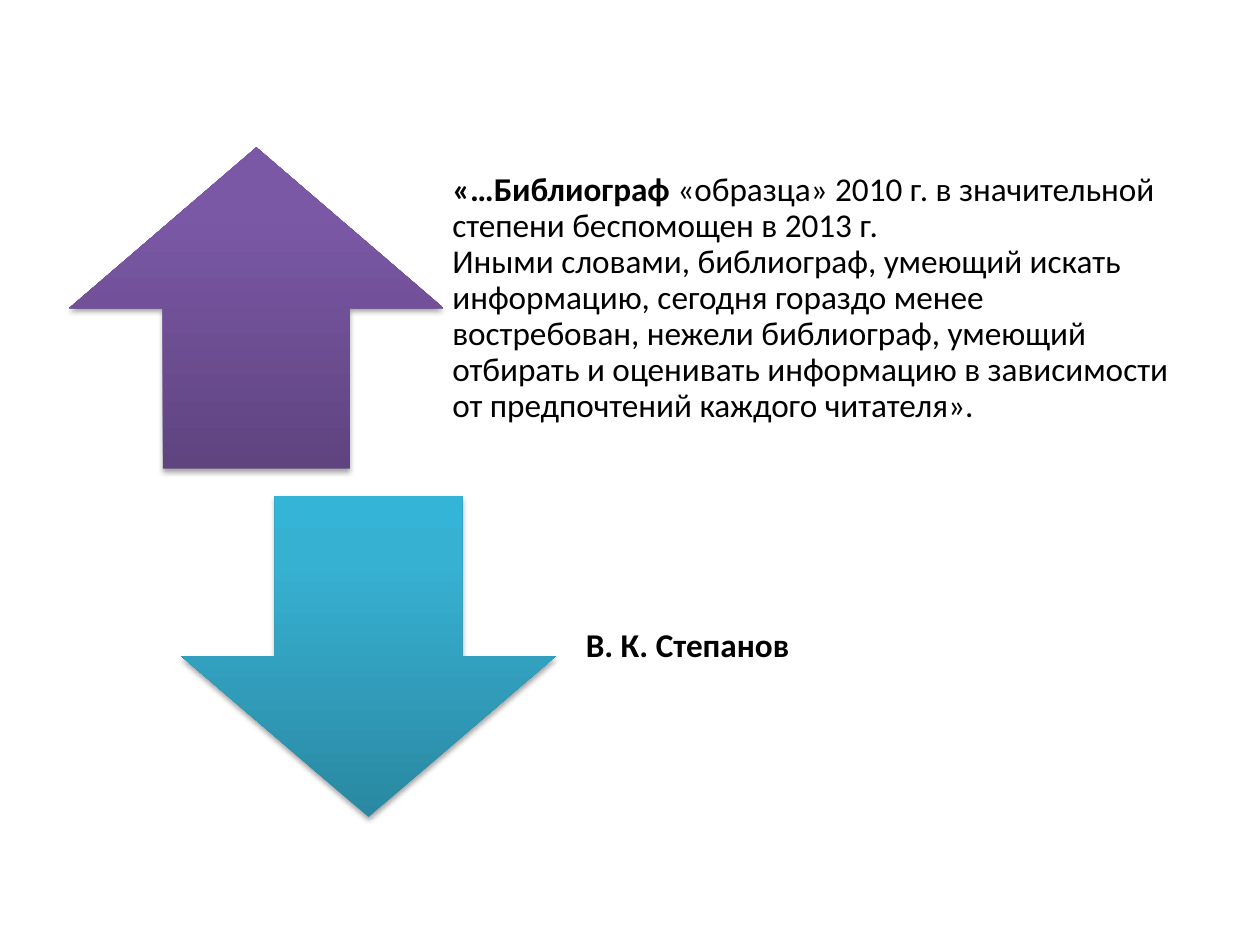
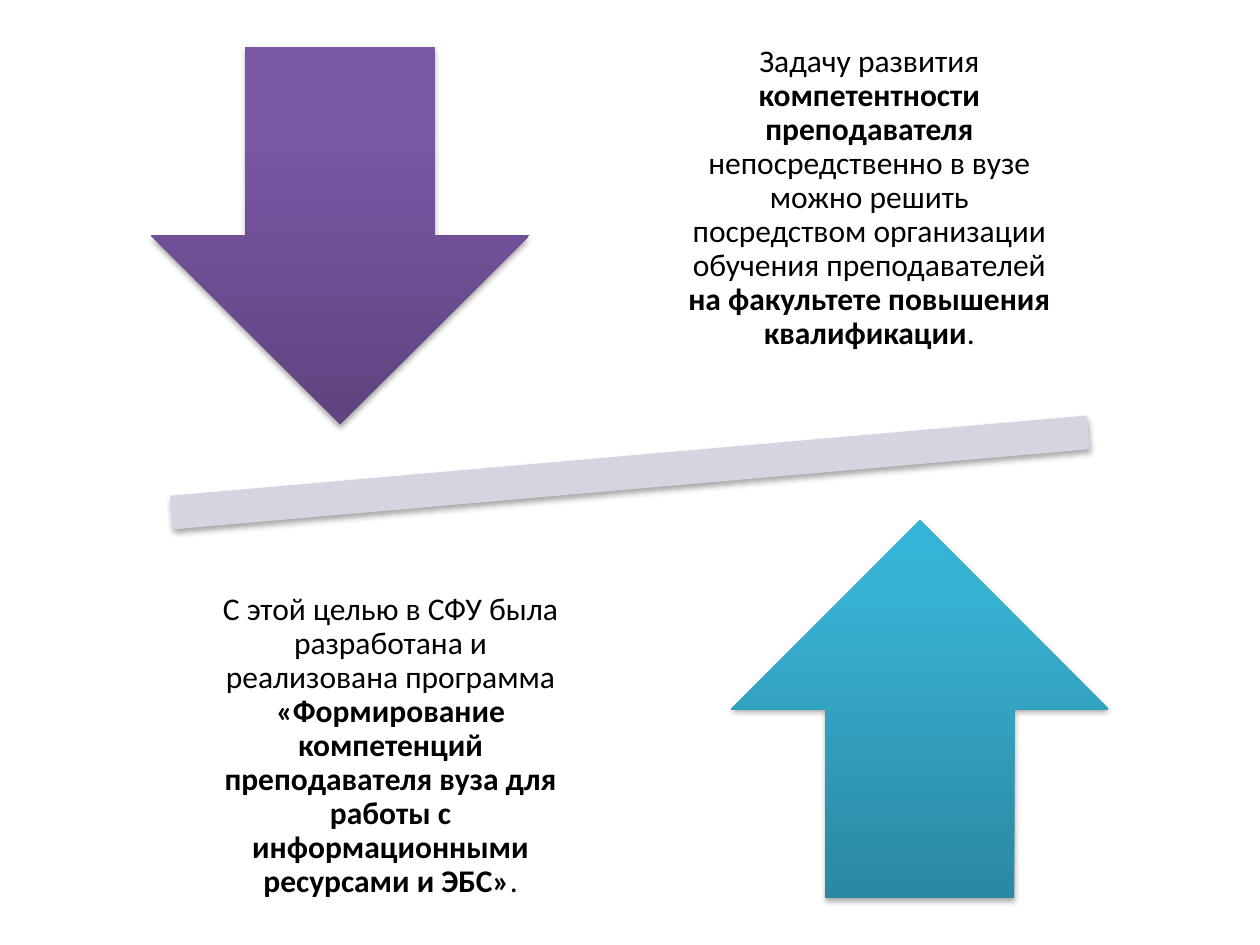
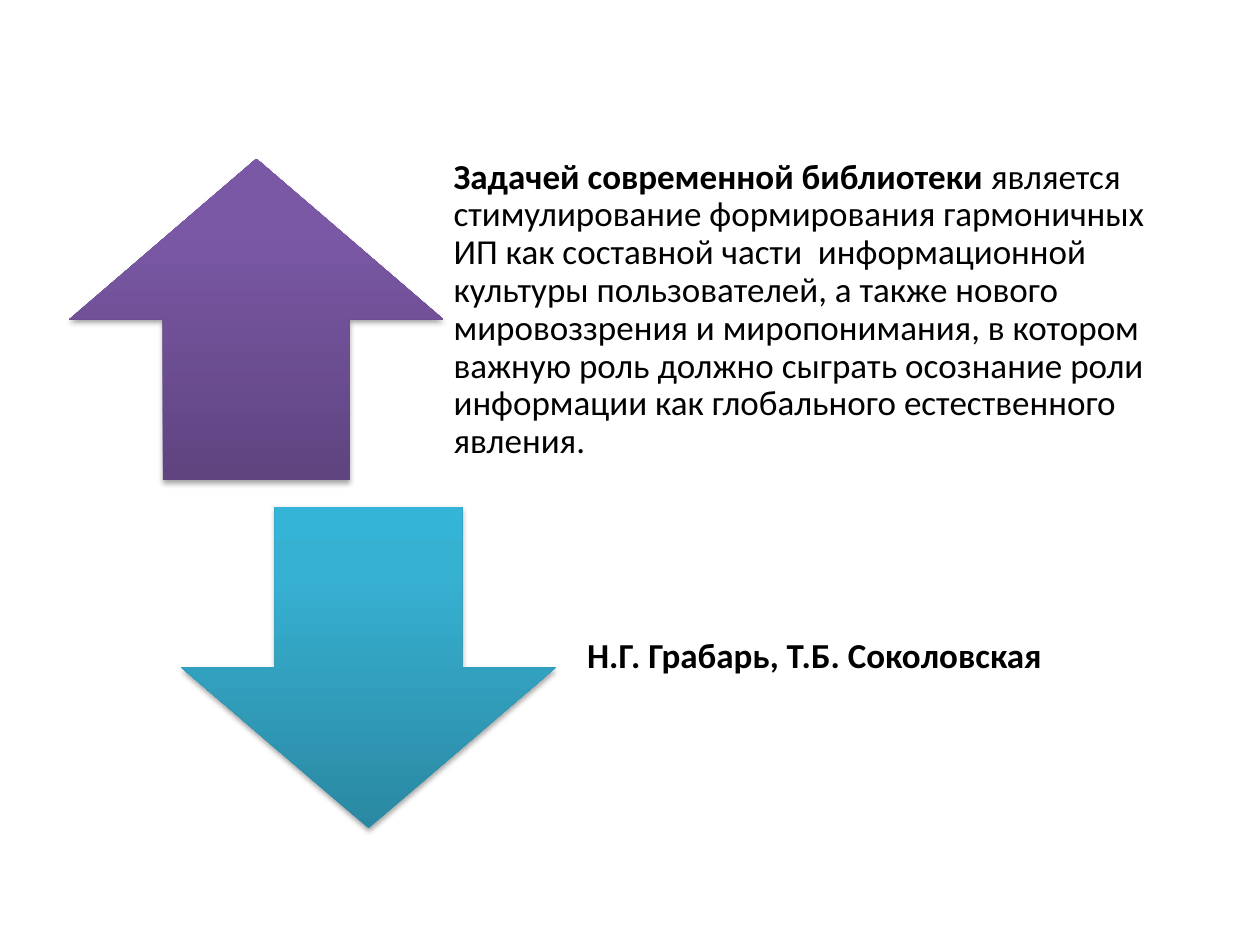
from typing import NamedTuple

from lxml import etree
from pptx import Presentation
from pptx import util as u
from pptx.dml.color import RGBColor
from pptx.enum import shapes, text
from pptx.oxml import ns

Pt = u.Pt
FONT = "Calibri"
SLIDE_WIDTH, SLIDE_HEIGHT = 720, 540
COLORS = {"text": "000000", "bar": "D8D3E0", "shadow": "000000"}

# Gradient stops run from the bottom of an arrow (0 %) to its top (100 %)
GRADIENTS = {
    "purple": {0: "5F4480", 80: "7B58A6", 100: "7C57A8"},
    "teal": {0: "2A88A2", 80: "37B1D2", 100: "34B4D6"},
}
UP = shapes.MSO_SHAPE.UP_ARROW
DOWN = shapes.MSO_SHAPE.DOWN_ARROW


class Box(NamedTuple):
    left: float
    top: float
    width: float
    height: float

    def lengths(self) -> list:
        return [Pt(value) for value in self]

    def mirrored(self) -> "Box":
        """The box turned half a circle around the slide's centre."""
        return Box(SLIDE_WIDTH - self.left - self.width,
                   SLIDE_HEIGHT - self.top - self.height, self.width, self.height)


class Piece(NamedTuple):
    text: str
    bold: bool = False


class Caption(NamedTuple):
    box: Box
    pieces: list
    size: float
    insets: tuple  # left, top, right, bottom
    alignment: text.PP_ALIGN = text.PP_ALIGN.LEFT


class Quote(NamedTuple):
    arrow_top: float
    text_top: float
    text_height: float
    size: float
    inset: float
    pieces: list
    author: str


# Shared drawing functions
def add_child(parent, tag: str, **attributes):
    values = {name: str(value) for name, value in attributes.items()}
    return etree.SubElement(parent, ns.qn(tag), values)


def add_shadow(shape) -> None:
    shape.shadow.inherit = False
    effects = shape._element.spPr.find(ns.qn("a:effectLst"))
    shadow = add_child(effects, "a:outerShdw", blurRad=Pt(3.15), dist=Pt(1.8),
                       dir=90 * 60000, rotWithShape=0)
    color = add_child(shadow, "a:srgbClr", val=COLORS["shadow"])
    add_child(color, "a:alpha", val=35000)


def add_arrow(slide, kind: shapes.MSO_SHAPE, box: Box, gradient: str) -> None:
    shape = slide.shapes.add_shape(kind, *box.lengths())
    shape.line.fill.background()
    shape.fill.gradient()
    fill = shape._element.spPr.find(ns.qn("a:gradFill"))
    for child in list(fill):
        fill.remove(child)
    stops = add_child(fill, "a:gsLst")
    for position, color in GRADIENTS[gradient].items():
        stop = add_child(stops, "a:gs", pos=position * 1000)
        add_child(stop, "a:srgbClr", val=color)
    add_child(fill, "a:lin", ang=270 * 60000, scaled=0)
    add_shadow(shape)


def add_caption(slide, caption: Caption) -> None:
    frame = slide.shapes.add_textbox(*caption.box.lengths()).text_frame
    frame.word_wrap = True
    frame.vertical_anchor = text.MSO_ANCHOR.MIDDLE
    (frame.margin_left, frame.margin_top,
     frame.margin_right, frame.margin_bottom) = map(Pt, caption.insets)
    paragraph = frame.paragraphs[0]
    paragraph.alignment = caption.alignment
    paragraph.line_spacing = 0.9
    spacing = add_child(paragraph._p.get_or_add_pPr(), "a:spcAft")
    add_child(spacing, "a:spcPct", val=35000)
    for piece in caption.pieces:
        for number, line in enumerate(piece.text.split("\n")):
            if number:
                paragraph.add_line_break()
            run = paragraph.add_run()
            run.text = line
            run.font.name = FONT
            run.font.size = Pt(caption.size)
            run.font.bold = piece.bold
            run.font.color.rgb = RGBColor.from_string(COLORS["text"])


# Slide kinds
def add_quote_slide(slide, quote: Quote) -> None:
    arrow = Box(39.6, quote.arrow_top, 213.84, 183.6)
    lower_top = arrow.top + 199
    insets = (quote.inset, 0, quote.inset, quote.inset)
    add_arrow(slide, UP, arrow, "purple")
    add_caption(slide, Caption(
        Box(247.68, quote.text_top, 433.44, quote.text_height),
        quote.pieces, quote.size, insets))
    add_arrow(slide, DOWN, arrow._replace(left=103.68, top=lower_top), "teal")
    add_caption(slide, Caption(
        Box(324, lower_top, 362.88, arrow.height),
        [Piece(quote.author, True)], quote.size, insets))


def add_balance_slide(slide, upper: list, lower: list) -> None:
    # Tilted bar
    bar = slide.shapes.add_shape(shapes.MSO_SHAPE.MATH_MINUS,
                                 *Box(2.16, 229, 715.68, 82).lengths())
    bar.rotation = 355
    bar.fill.solid()
    bar.fill.fore_color.rgb = RGBColor.from_string(COLORS["bar"])
    bar.line.fill.background()
    add_shadow(bar)

    # Arrow and text above the bar, mirrored below it
    arrow = Box(86.4, 26.64, 216, 216)
    words = Box(381.6, 0, 230.4, 226.8)
    sides = [(DOWN, arrow, "purple", words, upper),
             (UP, arrow.mirrored(), "teal", words.mirrored(), lower)]
    for kind, arrow_box, gradient, text_box, pieces in sides:
        add_arrow(slide, kind, arrow_box, gradient)
        add_caption(slide, Caption(text_box, pieces, 18, (10.08,) * 4,
                                   text.PP_ALIGN.CENTER))


# Content
STEPANOV = Quote(84.24, 84.24, 183.6, 19, 10.8, [
    Piece("«…Библиограф", True),
    Piece(" «образца» 2010 г. в значительной степени беспомощен в 2013 г.\n"
          "Иными словами, библиограф, умеющий искать информацию, сегодня гораздо "
          "менее востребован, нежели библиограф, умеющий отбирать и оценивать "
          "информацию в зависимости от предпочтений каждого читателя»."),
], "В. К. Степанов")

TEACHER_TASK = [
    Piece("Задачу развития "),
    Piece("компетентности преподавателя ", True),
    Piece("непосредственно в вузе можно решить посредством организации "
          "обучения преподавателей "),
    Piece("на факультете повышения квалификации", True),
    Piece("."),
]
PROGRAMME = [
    Piece("С этой целью в СФУ была разработана и реализована программа "),
    Piece("«Формирование компетенций преподавателя вуза для работы с "
          "информационными ресурсами и ЭБС»", True),
    Piece("."),
]

LIBRARY_TASK = Quote(90.72, 77.76, 210.24, 20, 11.52, [
    Piece("Задачей современной библиотеки ", True),
    Piece("является стимулирование формирования гармоничных ИП как составной "
          "части  информационной культуры пользователей, а также нового "
          "мировоззрения и миропонимания, в котором важную роль должно сыграть "
          "осознание роли информации как глобального естественного явления."),
], "Н.Г. Грабарь, Т.Б. Соколовская")


def main() -> None:
    presentation = Presentation()
    presentation.slide_width = Pt(SLIDE_WIDTH)
    presentation.slide_height = Pt(SLIDE_HEIGHT)
    blank = presentation.slide_layouts[6]
    first, second, third = (presentation.slides.add_slide(blank) for _ in range(3))
    add_quote_slide(first, STEPANOV)
    add_balance_slide(second, TEACHER_TASK, PROGRAMME)
    add_quote_slide(third, LIBRARY_TASK)
    presentation.save("out.pptx")


if __name__ == "__main__":
    main()
